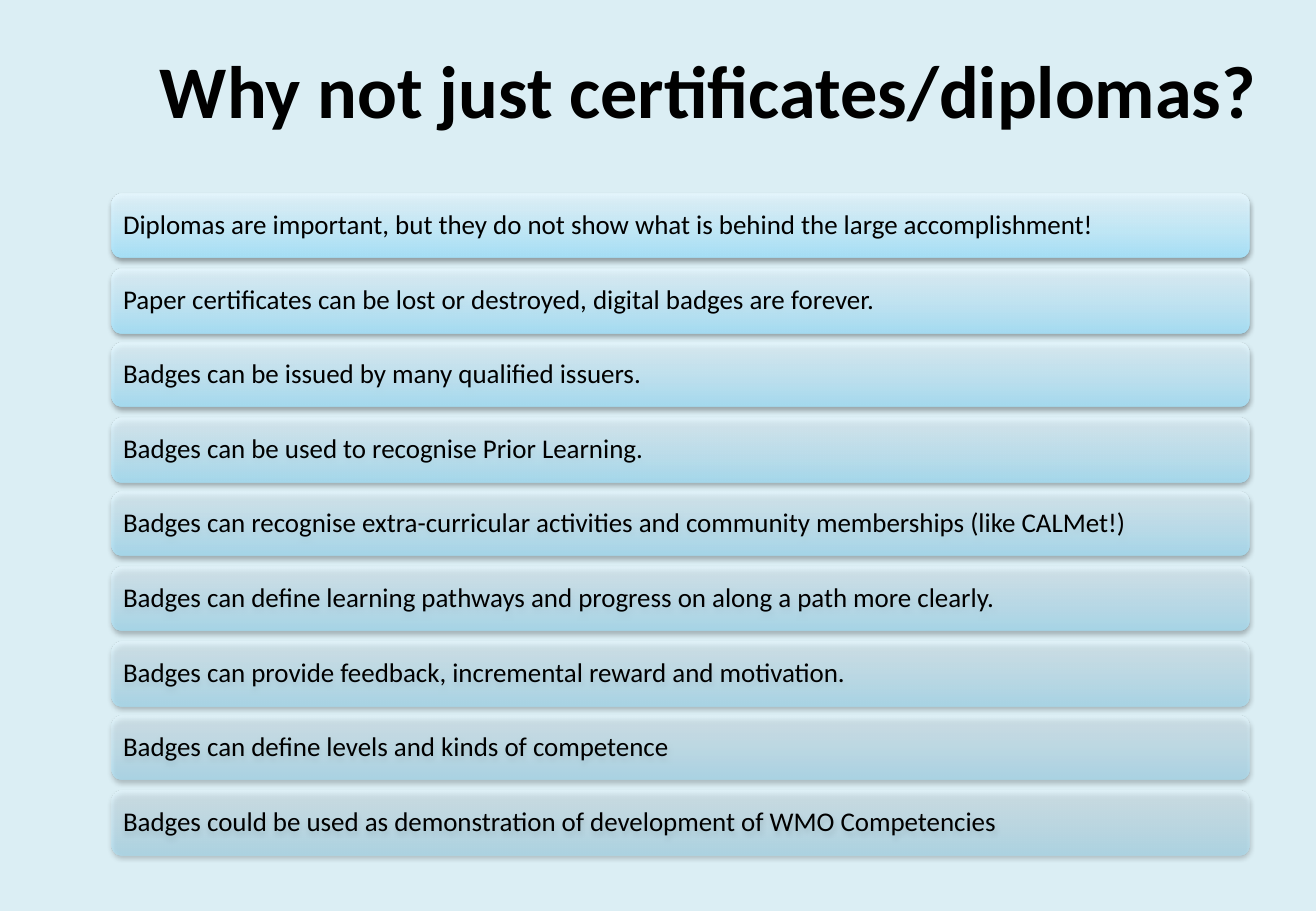
import pptx
import pptx.util
import pptx.dml.color
import pptx.enum.shapes
import pptx.enum.text
import pptx.oxml.ns
import lxml.etree

PX = 7526  # EMU per px
FONT = "Calibri"
COLORS = {
    "background": "DBEEF4",
    "text": "000000",
    "shadow": "000000",
    "bar_bottom": "A7E6FF",
    "bar_middle": "C1EDFF",
    "bar_top": "E7F8FF",
}
BAR_STOPS = [(0, "bar_bottom"), (35, "bar_middle"), (100, "bar_top")]

TITLE = "Why not just certificates/diplomas?"
REASONS = [
    "Diplomas are important, but they do not show what is behind the large accomplishment!",
    "Paper certificates can be lost or destroyed, digital badges are forever.",
    "Badges can be issued by many qualified issuers.",
    "Badges can be used to recognise Prior Learning.",
    "Badges can recognise extra-curricular activities and community memberships (like CALMet!)",
    "Badges can define learning pathways and progress on along a path more clearly.",
    "Badges can provide feedback, incremental reward and motivation.",
    "Badges can define levels and kinds of competence",
    "Badges could be used as demonstration of development of WMO Competencies",
]

# Bar column, in px
BAR_LEFT, BAR_WIDTH, BAR_HEIGHT = 112, 1137, 64
FIRST_TOP, LAST_TOP = 194, 791


def px(n):
    return pptx.util.Emu(n * PX)


def rgb(name):
    return pptx.dml.color.RGBColor.from_string(COLORS[name])


def add_xml(parent, tag, **attrs):
    el = lxml.etree.SubElement(parent, pptx.oxml.ns.qn(tag))
    for key, value in attrs.items():
        el.set(key, str(value))
    return el


def add_color(parent, name, opacity):
    clr = add_xml(parent, "a:srgbClr", val=COLORS[name])
    add_xml(clr, "a:alpha", val=opacity * 1000)


def write(tf, text, size, align, bold=False):
    p = tf.paragraphs[0]
    p.alignment = align
    r = p.add_run()
    r.text = text
    r.font.name = FONT
    r.font.size = pptx.util.Pt(size)
    r.font.bold = bold
    r.font.color.rgb = rgb("text")
    return p


def add_title(s, text):
    sp = s.shapes.title
    sp.left, sp.top, sp.width, sp.height = px(26), px(38), px(1244), px(102)
    tf = sp.text_frame
    tf.word_wrap = True
    tf.vertical_anchor = pptx.enum.text.MSO_ANCHOR.TOP
    write(tf, text, 44, pptx.enum.text.PP_ALIGN.RIGHT, bold=True)


def set_gradient(sp, opacity):
    sp.fill.gradient()
    sp.fill.gradient_angle = 90
    stops = sp.element.spPr.find(".//" + pptx.oxml.ns.qn("a:gsLst"))
    for old in list(stops):
        stops.remove(old)
    for pos, name in BAR_STOPS:
        add_color(add_xml(stops, "a:gs", pos=pos * 1000), name, opacity)


def set_shadow(sp):
    sp.shadow.inherit = False
    effects = sp.element.spPr.find(pptx.oxml.ns.qn("a:effectLst"))
    shadow = add_xml(effects, "a:outerShdw", blurRad=pptx.util.Pt(3.1),
                     dist=pptx.util.Pt(1.6), dir=5400000, rotWithShape=0)
    add_color(shadow, "shadow", 38)


def add_bar(s, top, text, opacity):
    sp = s.shapes.add_shape(pptx.enum.shapes.MSO_SHAPE.ROUNDED_RECTANGLE,
                            px(BAR_LEFT), px(top), px(BAR_WIDTH), px(BAR_HEIGHT))
    set_gradient(sp, opacity)
    sp.line.fill.background()
    set_shadow(sp)
    tf = sp.text_frame
    tf.word_wrap = True
    tf.vertical_anchor = pptx.enum.text.MSO_ANCHOR.MIDDLE
    # The rounded corners already inset the text by 3 px
    tf.margin_left = tf.margin_right = px(8)
    p = write(tf, text, 16, pptx.enum.text.PP_ALIGN.LEFT)
    p.line_spacing = 0.9


def main():
    prs = pptx.Presentation()
    prs.slide_width, prs.slide_height = px(1316), px(911)
    s = prs.slides.add_slide(prs.slide_layouts[5])
    s.background.fill.solid()
    s.background.fill.fore_color.rgb = rgb("background")

    add_title(s, TITLE)

    # Equal steps down the column, each bar 5 % more transparent
    for i, reason in enumerate(REASONS):
        top = FIRST_TOP + round(i * (LAST_TOP - FIRST_TOP) / (len(REASONS) - 1))
        add_bar(s, top, reason, 90 - 5 * i)

    prs.save("out.pptx")


if __name__ == "__main__":
    main()
